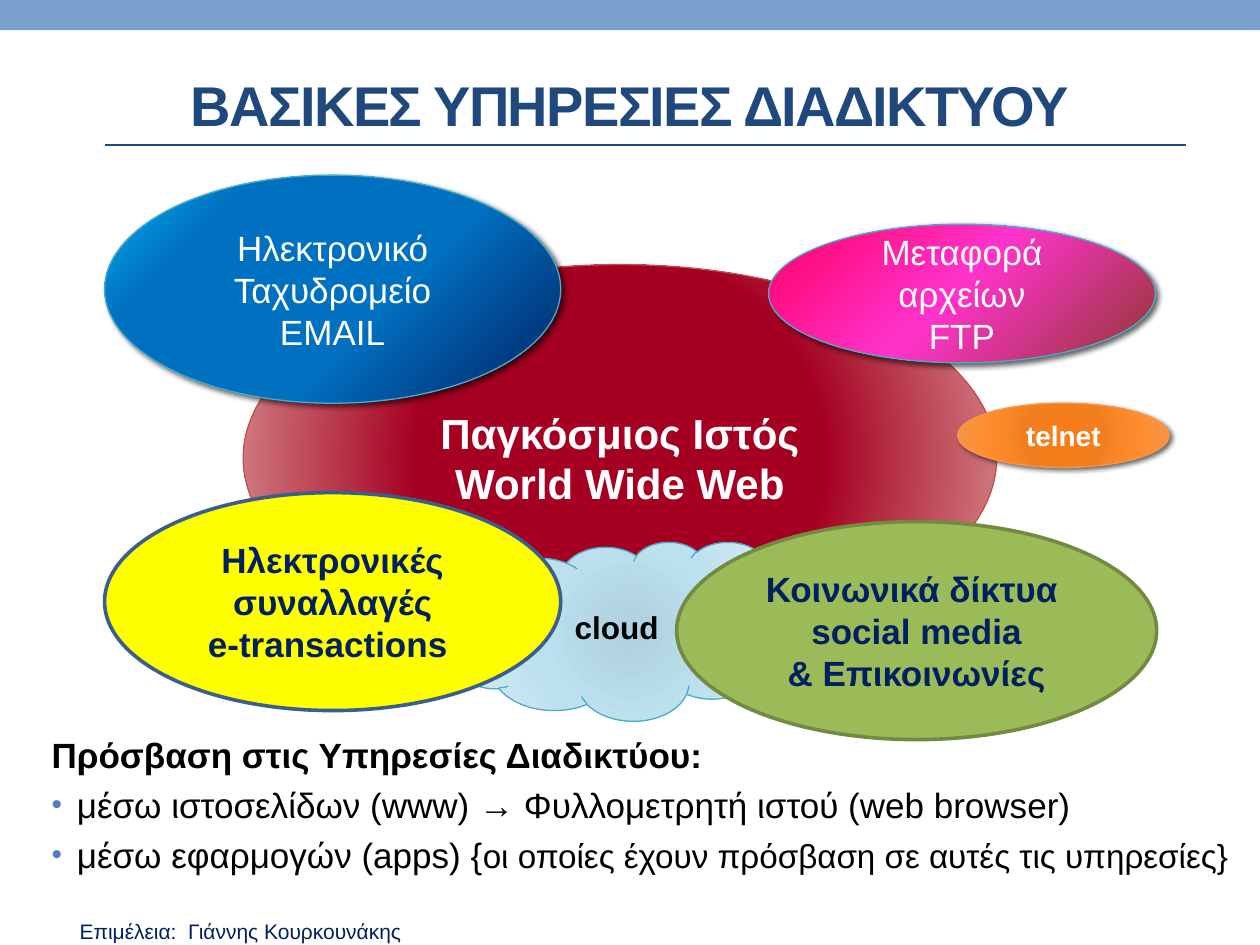
from dataclasses import dataclass

from lxml.etree import SubElement
from pptx import Presentation
from pptx.dml.color import RGBColor
from pptx.enum.shapes import MSO_CONNECTOR, MSO_SHAPE
from pptx.enum.text import MSO_ANCHOR, MSO_AUTO_SIZE, PP_ALIGN
from pptx.oxml.ns import qn
from pptx.util import Inches, Pt

FONT = "Arial"
BLACK = RGBColor(0x00, 0x00, 0x00)
WHITE = RGBColor(0xFF, 0xFF, 0xFF)
NAVY = RGBColor(0x00, 0x20, 0x60)
TITLE_BLUE = RGBColor(0x1F, 0x49, 0x7D)
ACCENT_BLUE = RGBColor(0x4F, 0x81, 0xBD)
TEAL = RGBColor(0x4B, 0xAC, 0xC6)
BRICK = RGBColor(0xC0, 0x50, 0x4D)
ORANGE = RGBColor(0xF7, 0x96, 0x46)
GREEN = RGBColor(0x9B, 0xBB, 0x59)
OLIVE = RGBColor(0x73, 0x8A, 0x42)
YELLOW = RGBColor(0xFF, 0xFF, 0x00)
STEEL = RGBColor(0x3A, 0x5F, 0x8C)

# Gradient stops run from the focus of the gradient outwards
WEB_STOPS = [(1, RGBColor(0xA5, 0x00, 0x21)), (48, RGBColor(0xA5, 0x00, 0x21)),
             (100, RGBColor(0xD9, 0x96, 0x94))]
EMAIL_STOPS = [(0, NAVY), (40, RGBColor(0x00, 0x70, 0xC0)),
               (77, RGBColor(0x00, 0x70, 0xC0)), (100, RGBColor(0x00, 0xB0, 0xF0))]
CLOUD_STOPS = [(0, RGBColor(0xAF, 0xD0, 0xDD)), (45, RGBColor(0xBC, 0xE0, 0xEE)),
               (100, RGBColor(0xDA, 0xEE, 0xF6))]
FTP_STOPS = [(2, RGBColor(0x95, 0x37, 0x35)), (52, RGBColor(0xFF, 0x33, 0xCC)),
             (100, RGBColor(0xFF, 0x00, 0x66))]
TELNET_STOPS = [(0, RGBColor(0xF9, 0x7D, 0x16)), (34, RGBColor(0xF2, 0x7E, 0x1E)),
                (70, RGBColor(0xFF, 0x8D, 0x30)), (100, ORANGE)]
CENTRE = dict(l=50, t=50, r=50, b=50)
CORNER = dict(l=100, t=100, r=0, b=0)


@dataclass
class Box:
    """An area on a grid of 100 columns by 75 rows."""
    column: float
    row: float
    columns: float
    rows: float

    def inner(self, column, row, columns, rows):
        return Box(self.column + column, self.row + row, columns, rows)

    def lengths(self):
        return [Inches(n / 10) for n in (self.column, self.row, self.columns, self.rows)]


def write(paragraph, text, size=20, color=BLACK, bold=False, align=None, spacing=None):
    """Add text to a paragraph, with a line break at each newline."""
    if align is not None:
        paragraph.alignment = align
    for i, line in enumerate(text.split("\n")):
        if i:
            paragraph.add_line_break()
        run = paragraph.add_run()
        run.text = line
        run.font.name, run.font.size, run.font.bold = FONT, Pt(size), bold
        run.font.color.rgb = color
        if spacing is not None:
            run.font._element.set("spc", str(spacing * 100))


def write_centred(frame, paragraphs, **style):
    frame.word_wrap = True
    frame.vertical_anchor = MSO_ANCHOR.MIDDLE
    for i, text in enumerate(paragraphs):
        paragraph = frame.add_paragraph() if i else frame.paragraphs[0]
        write(paragraph, text, align=PP_ALIGN.CENTER, **style)


def move(shape, box):
    shape.left, shape.top, shape.width, shape.height = box.lengths()


def radial_fill(shape, stops, focus):
    shape.fill.gradient()
    gradient = shape._element.spPr.find(qn("a:gradFill"))
    for child in list(gradient):
        gradient.remove(child)
    stop_list = SubElement(gradient, qn("a:gsLst"))
    for position, color in stops:
        stop = SubElement(stop_list, qn("a:gs"), pos=str(position * 1000))
        SubElement(stop, qn("a:srgbClr"), val=str(color))
    circle = SubElement(gradient, qn("a:path"), path="circle")
    SubElement(circle, qn("a:fillToRect"),
               {side: str(share * 1000) for side, share in focus.items()})


def add_shadow(shape):
    effects = shape._element.spPr.find(qn("a:effectLst"))
    shadow = SubElement(effects, qn("a:outerShdw"), blurRad=str(Pt(3)), dist=str(Pt(2)),
                        dir=str(45 * 60000), algn="tl", rotWithShape="0")
    color = SubElement(shadow, qn("a:srgbClr"), val=str(BLACK))
    SubElement(color, qn("a:alpha"), val="60000")


def add_service(slide, box, paragraphs, fill, line, kind=MSO_SHAPE.OVAL, focus=CENTRE,
                line_width=0.75, shadow=False, **style):
    service = slide.shapes.add_shape(kind, *box.lengths())
    service.shadow.inherit = False
    service.line.color.rgb, service.line.width = line, Pt(line_width)
    if isinstance(fill, RGBColor):
        service.fill.solid()
        service.fill.fore_color.rgb = fill
    else:
        radial_fill(service, fill, focus)
    if shadow:
        add_shadow(service)
    write_centred(service.text_frame, paragraphs, **style)


def add_header(slide, box):
    # Translucent band along the top edge
    band = slide.shapes.add_shape(MSO_SHAPE.RECTANGLE,
                                  *box.inner(0, 0, box.columns, 2.4).lengths())
    band.shadow.inherit = False
    band.line.fill.background()
    band.fill.solid()
    band.fill.fore_color.rgb = ACCENT_BLUE
    color = band._element.spPr.find(qn("a:solidFill"))[0]
    SubElement(color, qn("a:alpha"), val="75000")

    # Title and the rule below it
    title = slide.shapes.title
    move(title, box.inner(5, 2.9, 90, 10.8))
    title.text_frame.auto_size = MSO_AUTO_SIZE.NONE
    write_centred(title.text_frame, ["ΒΑΣΙΚΕΣ ΥΠΗΡΕΣΙΕΣ ΔΙΑΔΙΚΤΥΟΥ"],
                  size=32, color=TITLE_BLUE, bold=True, spacing=-1)
    left, top, width, _ = box.inner(8.3, 11.5, 85.8, 0).lengths()
    rule = slide.shapes.add_connector(MSO_CONNECTOR.STRAIGHT, left, top, left + width, top)
    rule.line.color.rgb, rule.line.width = TITLE_BLUE, Pt(1.5)
    SubElement(rule._element.spPr, qn("a:effectLst"))


def add_services(slide, box):
    # From back to front
    add_service(slide, box.inner(11, 7.1, 59.8, 30.7),
                ["Παγκόσμιος Ιστός", "World Wide Web"], WEB_STOPS, BRICK,
                size=24, color=WHITE, bold=True)
    add_service(slide, box.inner(0, 0, 36.2, 18.1),
                ["Ηλεκτρονικό Ταχυδρομείο", "EMAIL"], EMAIL_STOPS, TEAL,
                focus=CORNER, shadow=True, color=WHITE)
    add_service(slide, box.inner(27.5, 29.1, 28.3, 14.2), ["cloud"], CLOUD_STOPS, TEAL,
                kind=MSO_SHAPE.CLOUD, size=18, bold=True)
    add_service(slide, box.inner(52.7, 3.9, 30.7, 11), ["Μεταφορά αρχείων\nFTP"],
                FTP_STOPS, TEAL, focus=CORNER, shadow=True, color=WHITE)
    add_service(slide, box.inner(45.4, 27.5, 38.1, 17.3),
                ["Κοινωνικά δίκτυα \nsocial media\n& Επικοινωνίες"], GREEN, OLIVE,
                line_width=2.08, color=NAVY, bold=True)
    add_service(slide, box.inner(67.7, 18.1, 16.8, 5.1), ["telnet"], TELNET_STOPS, ORANGE,
                shadow=True, size=16, color=WHITE, bold=True)
    add_service(slide, box.inner(0, 25.2, 36.2, 17.3),
                ["Ηλεκτρονικές συναλλαγές", "e-transactions "], YELLOW, STEEL,
                line_width=2.08, color=NAVY, bold=True)


def add_access_list(slide, box):
    access = slide.placeholders[1]
    move(access, box)
    frame = access.text_frame
    frame.auto_size = MSO_AUTO_SIZE.NONE
    frame.word_wrap = True
    frame.margin_right = 0
    heading, web, apps = frame.paragraphs[0], frame.add_paragraph(), frame.add_paragraph()
    write(heading, "Πρόσβαση στις Υπηρεσίες Διαδικτύου:", bold=True)
    write(web, "μέσω ιστοσελίδων (www) → Φυλλομετρητή ιστού (web browser)")
    write(apps, "μέσω εφαρμογών (apps) {")
    write(apps, "οι οποίες έχουν πρόσβαση σε αυτές τις υπηρεσίες}", size=19)

    for paragraph in (heading, web, apps):
        paragraph.space_before = Pt(4.6)
        indent = 0 if paragraph is heading else Inches(0.2)
        properties = paragraph._p.get_or_add_pPr()
        properties.set("marL", str(indent))
        properties.set("indent", str(-indent))
        if paragraph is heading:
            SubElement(properties, qn("a:buNone"))
        else:
            bullet_color = SubElement(properties, qn("a:buClr"))
            SubElement(bullet_color, qn("a:srgbClr"), val=str(ACCENT_BLUE))
            SubElement(properties, qn("a:buSzPct"), val="85000")
            SubElement(properties, qn("a:buFont"), typeface=FONT)
            SubElement(properties, qn("a:buChar"), char="•")


def add_credit(slide, box):
    credit = slide.shapes.add_textbox(*box.lengths())
    write_centred(credit.text_frame, ["Επιμέλεια:  Γιάννης Κουρκουνάκης"],
                  size=12, color=NAVY)


def main():
    deck = Presentation()
    deck.slide_width, deck.slide_height = Inches(10), Inches(7.5)
    slide = deck.slides.add_slide(deck.slide_layouts[1])
    add_header(slide, Box(0, 0, 100, 13.7))
    add_access_list(slide, Box(3.1, 57.7, 95.7, 15.2))
    add_services(slide, Box(8.3, 13.9, 84.5, 44.8))
    add_credit(slide, Box(0, 72.1, 38.2, 3.6))
    deck.save("out.pptx")


if __name__ == "__main__":
    main()
